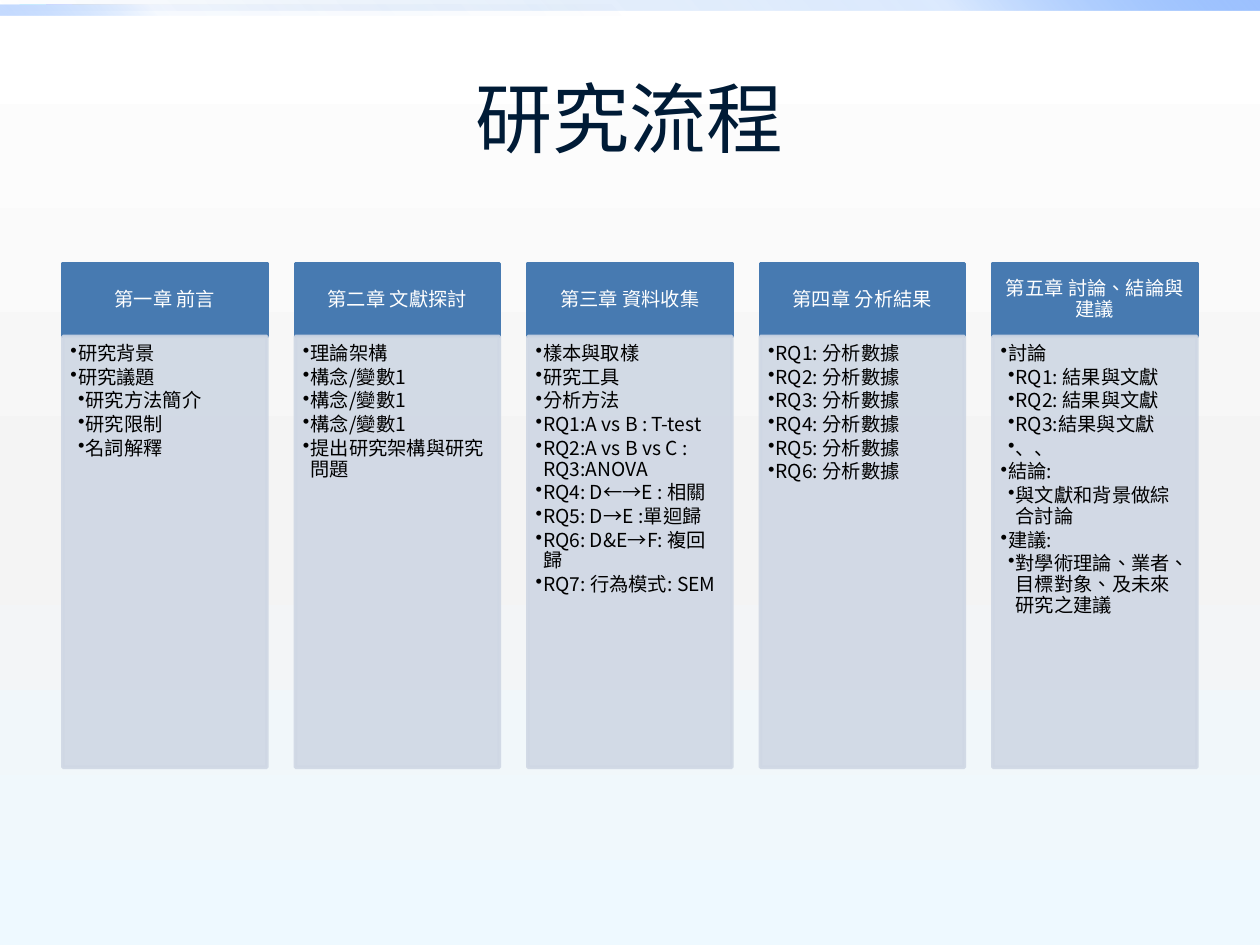
from dataclasses import dataclass

from lxml import etree
from pptx import Presentation
from pptx import util as u
from pptx.dml.color import RGBColor
from pptx.enum import lang, shapes, text
from pptx.oxml import ns


@dataclass(frozen=True)
class Theme:
    ink: str = "001B36"
    head: str = "477AB1"
    body: str = "CFD7E4"
    light: str = "FFFFFF"
    dark: str = "000000"
    latin: str = "Arial"
    cjk: str = "Noto Sans CJK SC"
    big: float = 44
    small: float = 11
    edge: float = 2


@dataclass(frozen=True)
class Stop:
    at: int
    color: str
    alpha: int = 100


@dataclass(frozen=True)
class Box:
    x: float
    y: float
    w: float
    h: float

    def emu(self) -> list:
        return [u.Inches(v) for v in (self.x, self.y, self.w, self.h)]


@dataclass(frozen=True)
class Step:
    head: str
    items: tuple  # (level, wording) pairs


THEME = Theme()
WIDE, HIGH = 10, 7.5
MARGIN = WIDE * 0.05
TOP, HEAD, BODY = 2.09, 0.58, 3.42
GAP = 0.14  # share of a column's width
INDENT = 0.06

STEPS = (
    Step("第一章 前言", (
        (1, "研究背景"), (1, "研究議題"), (2, "研究方法簡介"),
        (2, "研究限制"), (2, "名詞解釋"))),
    Step("第二章 文獻探討", (
        (1, "理論架構"), *[(1, "構念/變數1")] * 3, (1, "提出研究架構與研究問題"))),
    Step("第三章 資料收集", (
        (1, "樣本與取樣"), (1, "研究工具"), (1, "分析方法"),
        (1, "RQ1:A vs B : T-test"), (1, "RQ2:A vs B vs C : RQ3:ANOVA"),
        (1, "RQ4: D←→E : 相關"), (1, "RQ5: D→E :單迴歸"),
        (1, "RQ6: D&E→F: 複回歸"), (1, "RQ7: 行為模式: SEM"))),
    Step("第四章 分析結果", tuple((1, f"RQ{n}: 分析數據") for n in range(1, 7))),
    Step("第五章 討論、結論與建議", (
        (1, "討論"), (2, "RQ1: 結果與文獻"), (2, "RQ2: 結果與文獻"),
        (2, "RQ3:結果與文獻"), (2, "、、"), (1, "結論:"),
        (2, "與文獻和背景做綜合討論"), (1, "建議:"),
        (2, "對學術理論、業者、目標對象、及未來研究之建議"))),
)


def sub(node, tag: str, **attrs):
    return etree.SubElement(node, ns.qn(tag), **attrs)


def blend(node, stops: tuple, angle: int) -> None:
    """Swap the node's solid fill for a linear gradient, angle clockwise."""
    old = node.find(ns.qn("a:solidFill"))
    grad = etree.Element(ns.qn("a:gradFill"), rotWithShape="1")
    row = sub(grad, "a:gsLst")
    for stop in stops:
        mark = sub(row, "a:gs", pos=str(stop.at * 1000))
        tint = sub(mark, "a:srgbClr", val=stop.color)
        sub(tint, "a:alpha", val=str(stop.alpha * 1000))
    sub(grad, "a:lin", ang=str(angle * 60000), scaled="0")
    node.replace(old, grad)


def block(slide, box: Box, color: str, alpha: int = 100):
    shape = slide.shapes.add_shape(shapes.MSO_SHAPE.RECTANGLE, *box.emu())
    shape.shadow.inherit = False
    shape.fill.solid()
    shape.fill.fore_color.rgb = RGBColor.from_string(color)
    shape.line.color.rgb = RGBColor.from_string(color)
    shape.line.width = u.Pt(THEME.edge)
    if alpha < 100:
        for tint in shape.element.spPr.iter(ns.qn("a:srgbClr")):
            sub(tint, "a:alpha", val=str(alpha * 1000))
    return shape


def bar(slide, box: Box, stops: tuple, angle: int) -> None:
    shape = block(slide, box, THEME.light)
    shape.line.fill.background()
    blend(shape.element.spPr, stops, angle)


def frame(shape, pads: tuple, anchor):
    area = shape.text_frame
    area.word_wrap = True
    area.vertical_anchor = anchor
    (area.margin_left, area.margin_top,
     area.margin_right, area.margin_bottom) = [u.Inches(p) for p in pads]
    return area


def style(para, size: float, color: str, face: str) -> None:
    for run in para.runs:
        run.font.size = u.Pt(size)
        run.font.name = face
        run.font.color.rgb = RGBColor.from_string(color)
        run.font.language_id = lang.MSO_LANGUAGE_ID.TRADITIONAL_CHINESE
        sub(run.font._element, "a:ea", typeface=THEME.cjk)


def bullet(para, level: int) -> None:
    props = para._p.get_or_add_pPr()
    props.set("marL", str(u.Inches(INDENT * level)))
    props.set("indent", str(-u.Inches(INDENT)))
    sub(props, "a:buChar", char="•")


def column(slide, step: Step, left: float, width: float) -> None:
    top = block(slide, Box(left, TOP, width, HEAD), THEME.head)
    area = frame(top, (0.09, 0.05, 0.09, 0.05), text.MSO_ANCHOR.MIDDLE)
    area.text = step.head
    para = area.paragraphs[0]
    para.alignment = text.PP_ALIGN.CENTER
    para.line_spacing = 0.9
    style(para, THEME.small, THEME.light, THEME.cjk)

    base = block(slide, Box(left, TOP + HEAD, width, BODY), THEME.body, 90)
    area = frame(base, (0.06, 0.06, 0.09, 0.1), text.MSO_ANCHOR.TOP)
    area.text = "\n".join(words for _, words in step.items)
    for para, (level, _) in zip(area.paragraphs, step.items):
        para.alignment = text.PP_ALIGN.LEFT
        para.line_spacing = 0.9
        para.space_after = u.Pt(THEME.small * 0.15)
        bullet(para, level)
        style(para, THEME.small, THEME.dark, THEME.cjk)


def title(slide, words: str) -> None:
    box = Box(MARGIN, HIGH * 0.04, WIDE - 2 * MARGIN, HIGH / 6)
    area = frame(slide.shapes.add_textbox(*box.emu()),
                 (0.1, 0.05, 0.1, 0.05), text.MSO_ANCHOR.MIDDLE)
    area.text = words
    area.paragraphs[0].alignment = text.PP_ALIGN.CENTER
    style(area.paragraphs[0], THEME.big, THEME.ink, THEME.latin)


def main() -> None:
    deck = Presentation()
    deck.slide_width, deck.slide_height = u.Inches(WIDE), u.Inches(HIGH)
    slide = deck.slides.add_slide(deck.slide_layouts[6])

    slide.background.fill.solid()
    slide.background.fill.fore_color.rgb = RGBColor.from_string(THEME.light)
    blend(slide.element.find(".//" + ns.qn("p:bgPr")),
          (Stop(0, "FFFFFF"), Stop(55, "F4F4F4"), Stop(100, "EEF9FF")), 90)
    bar(slide, Box(0, 0, WIDE, 0.08),
        (Stop(0, "0058B7", 0), Stop(75, "4F95FF", 20), Stop(100, "9EC2FF")), 315)
    bar(slide, Box(0, 0.04, WIDE / 2, 0.08),
        (Stop(0, "0058B7", 0), Stop(75, "4F95FF", 5), Stop(100, "9EC2FF", 60)), 135)

    title(slide, "研究流程")
    count = len(STEPS)
    width = (WIDE - 2 * MARGIN) / (count + GAP * (count - 1))
    for i, step in enumerate(STEPS):
        column(slide, step, MARGIN + i * width * (1 + GAP), width)
    deck.save("out.pptx")


if __name__ == "__main__":
    main()
